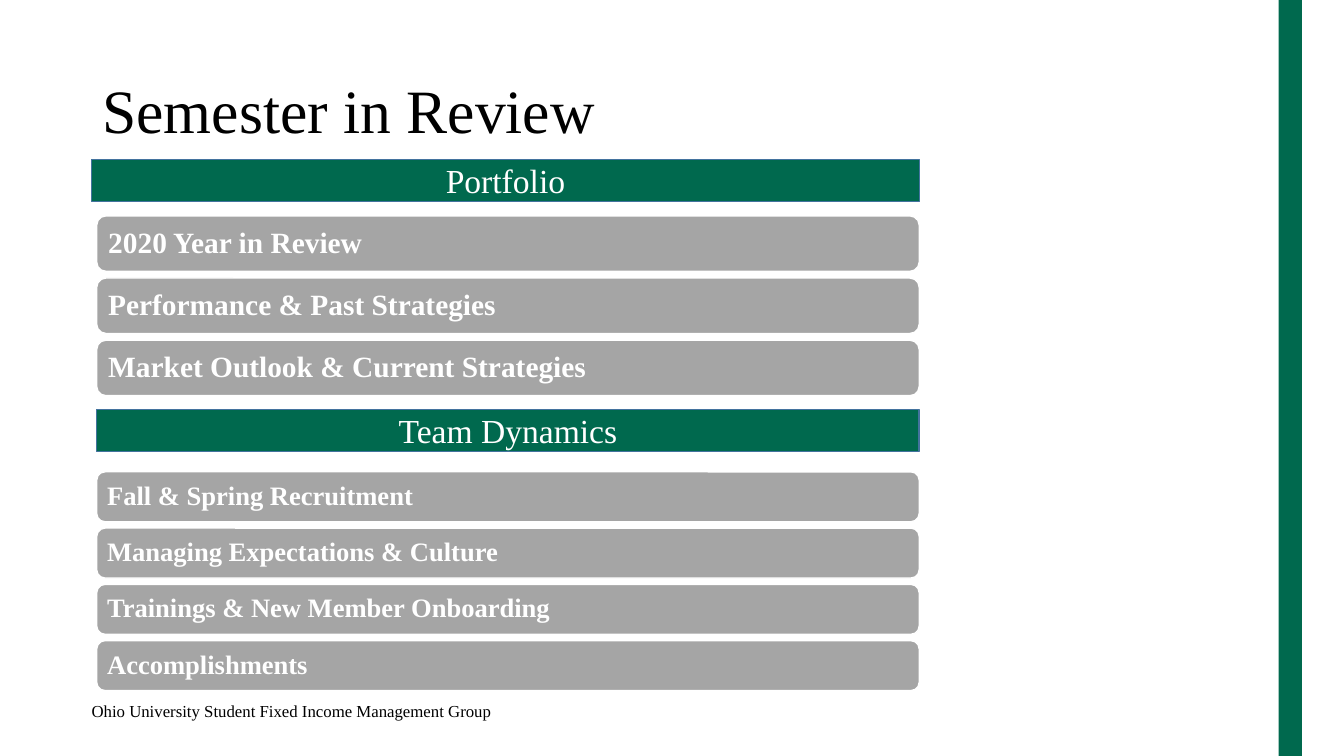
from pptx import Presentation
from pptx.dml.color import RGBColor
from pptx.enum import shapes, text
from pptx.util import Pt

FONT = "Times New Roman"
GREEN, GREY, BLUE = "00694E", "A5A5A5", "43739E"
WHITE, BLACK = "FFFFFF", "000000"
LEFT, WIDTH = 69.1, 587.5  # shared by the topic bars and the lower banner


def colour(hex_string):
    return RGBColor.from_string(hex_string)


def set_format(target, values):
    for name, value in values.items():
        setattr(target, name, value)


def write(box, wording, size, ink, bold=False, align=text.PP_ALIGN.LEFT,
          anchor=text.MSO_ANCHOR.MIDDLE, spacing=1.0, inset=None):
    frame = box.text_frame
    set_format(frame, {"word_wrap": True, "vertical_anchor": anchor,
                       "auto_size": text.MSO_AUTO_SIZE.NONE})
    if inset is not None:
        for side in ("left", "top", "right", "bottom"):
            setattr(frame, f"margin_{side}", Pt(inset))
    para = frame.paragraphs[0]
    set_format(para, {"alignment": align, "line_spacing": spacing})
    span = para.add_run()
    span.text = wording
    set_format(span.font, {"name": FONT, "size": Pt(size), "bold": bold})
    span.font.color.rgb = colour(ink)


def add_block(page, kind, place, fill, line=None):
    block = page.shapes.add_shape(kind, *map(Pt, place))
    block.shadow.inherit = False
    block.fill.solid()
    block.fill.fore_color.rgb = colour(fill)
    if line:
        block.line.color.rgb = colour(line)
        block.line.width = Pt(1)
    else:
        block.line.fill.background()
    return block


def add_title(page, wording):
    title = page.shapes.title
    set_format(title, {"left": Pt(66), "top": Pt(28.8),
                       "width": Pt(828), "height": Pt(104.4)})
    write(title, wording, 44, BLACK, spacing=0.9)


def add_footer(page, wording):
    box = page.shapes.add_textbox(Pt(58.3), Pt(496.8), Pt(480), Pt(21.6))
    write(box, wording, 12, BLACK, anchor=text.MSO_ANCHOR.TOP)


def add_banner(page, wording, left, top, width):
    banner = add_block(page, shapes.MSO_SHAPE.RECTANGLE,
                       (left, top, width, 30.2), GREEN, BLUE)
    write(banner, wording, 24, WHITE, align=text.PP_ALIGN.CENTER)


def add_topics(page, topics, top, pitch, height, size, inset):
    for row, topic in enumerate(topics):
        bar = add_block(page, shapes.MSO_SHAPE.ROUNDED_RECTANGLE,
                        (LEFT, top + row * pitch, WIDTH, height), GREY, WHITE)
        write(bar, topic, size, WHITE, bold=True, spacing=0.9, inset=inset)


def main():
    deck = Presentation()
    deck.slide_width, deck.slide_height = Pt(960), Pt(540)
    page = deck.slides.add_slide(deck.slide_layouts[5])

    # Page frame: footer, side stripe and title
    add_footer(page, "Ohio University Student Fixed Income Management Group")
    add_block(page, shapes.MSO_SHAPE.RECTANGLE, (913.4, 0, 16.6, 540), GREEN)
    add_title(page, "Semester in Review")

    # Portfolio section
    add_topics(page, ["2020 Year in Review", "Performance & Past Strategies",
                      "Market Outlook & Current Strategies"],
               top=154.2, pitch=44.4, height=39.6, size=21, inset=6.3)
    add_banner(page, "Portfolio", 65.5, 113.8, 591.1)

    # Team section
    add_banner(page, "Team Dynamics", LEFT, 292.4, WIDTH)
    add_topics(page, ["Fall & Spring Recruitment",
                      "Managing Expectations & Culture",
                      "Trainings & New Member Onboarding", "Accomplishments"],
               top=337, pitch=40.2, height=35.7, size=19, inset=5.7)

    deck.save("out.pptx")


if __name__ == "__main__":
    main()
